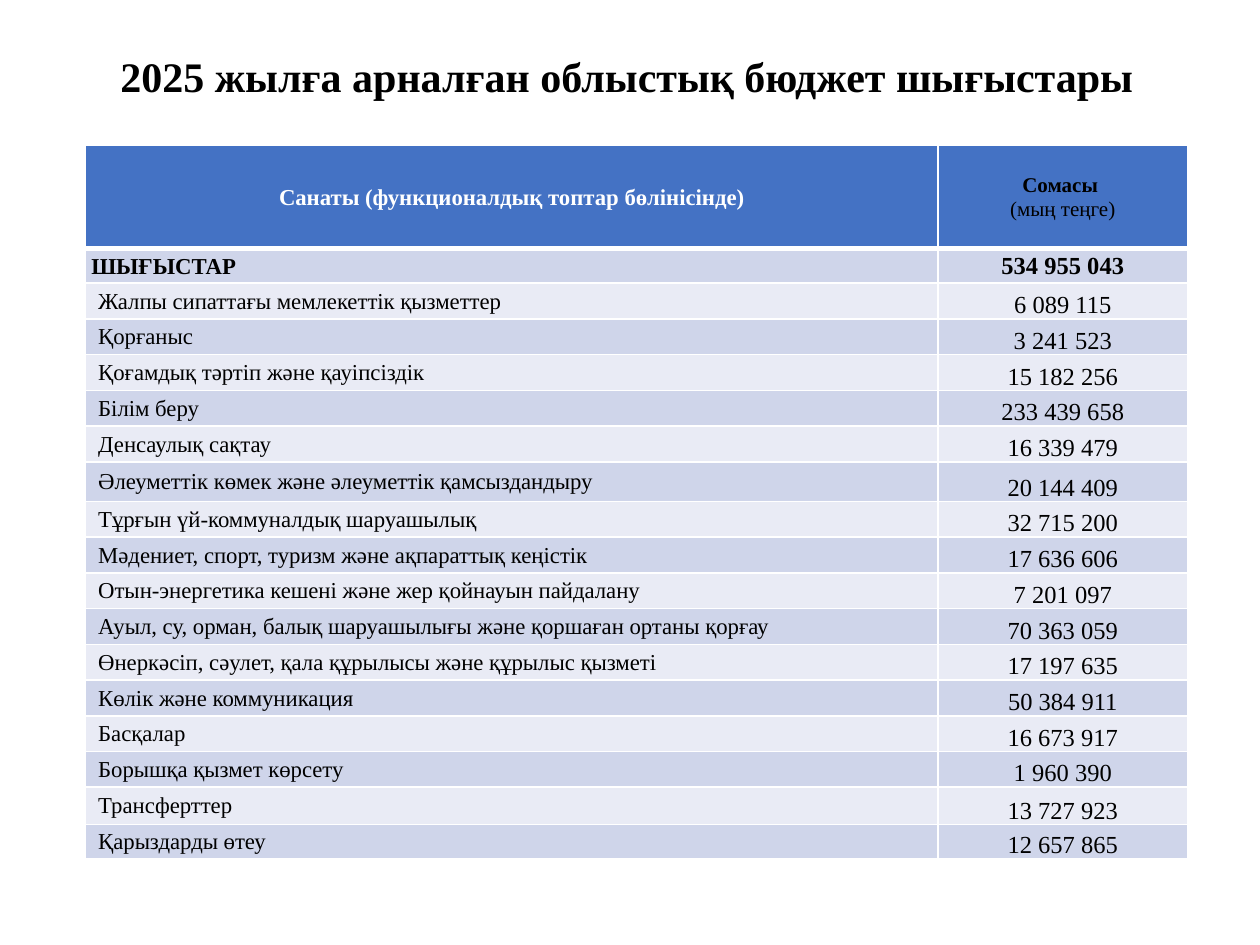
"""Build the slide with the 2025 regional budget expenditure table."""
import pptx
import pptx.dml.color
import pptx.enum.text
import pptx.oxml
import pptx.oxml.ns
import pptx.util

Cm = pptx.util.Cm
Pt = pptx.util.Pt
RGBColor = pptx.dml.color.RGBColor
ALIGN = pptx.enum.text.PP_ALIGN
ANCHOR = pptx.enum.text.MSO_ANCHOR

BLACK = RGBColor(0x00, 0x00, 0x00)
WHITE = RGBColor(0xFF, 0xFF, 0xFF)
HEADER_BLUE = RGBColor(0x44, 0x72, 0xC4)
BAND_DARK = RGBColor(0xCF, 0xD5, 0xEA)
BAND_LIGHT = RGBColor(0xE9, 0xEB, 0xF5)

HEADERS = ("Санаты (функционалдық топтар бөлінісінде)", "Сомасы \n(мың теңге)")
EXPENSES = [
    ("ШЫҒЫСТАР", "534 955 043"),
    ("Жалпы сипаттағы мемлекеттiк қызметтер", "6 089 115"),
    ("Қорғаныс", "3 241 523"),
    ("Қоғамдық тәртіп және қауіпсіздік", "15 182 256"),
    ("Білім беру", "233 439 658"),
    ("Денсаулық сақтау", "16 339 479"),
    ("Әлеуметтiк көмек және әлеуметтiк қамсыздандыру", "20 144 409"),
    ("Тұрғын үй-коммуналдық шаруашылық", "32 715 200"),
    ("Мәдениет, спорт, туризм және ақпараттық кеңістiк", "17 636 606"),
    ("Отын-энергетика кешенi және жер қойнауын пайдалану", "7 201 097"),
    ("Ауыл, су, орман, балық шаруашылығы және қоршаған ортаны қорғау", "70 363 059"),
    ("Өнеркәсіп, сәулет, қала құрылысы және құрылыс қызметі", "17 197 635"),
    ("Көлiк және коммуникация", "50 384 911"),
    ("Басқалар", "16 673 917"),
    ("Борышқа қызмет көрсету", "1 960 390"),
    ("Трансферттер", "13 727 923"),
    ("Қарыздарды өтеу", "12 657 865"),
]
ROW_HEIGHT = 0.72
SPECIAL_HEIGHTS = {0: 2.08, 1: 0.7, 7: 0.8, 16: 0.75, 17: 0.7}


def style_text(para, size, color, bold, align):
    para.alignment = align
    for span in para.runs:
        span.font.name = "Times New Roman"
        span.font.size = Pt(size)
        span.font.bold = bold
        span.font.color.rgb = color


def add_borders(cell, widths):
    properties = cell._tc.get_or_add_tcPr()
    for side, width in widths.items():
        properties.append(pptx.oxml.parse_xml(
            f'<a:{side} {pptx.oxml.ns.nsdecls("a")} w="{Pt(width)}">'
            f'<a:solidFill><a:srgbClr val="{WHITE}"/></a:solidFill></a:{side}>'))


deck = pptx.Presentation()
deck.slide_width = Cm(25.4)
deck.slide_height = Cm(19.05)
page = deck.slides.add_slide(deck.slide_layouts[6])

title_box = page.shapes.add_textbox(Cm(1.32), Cm(0.94), Cm(22.63), Cm(1.24))
title_frame = title_box.text_frame
title_frame.word_wrap = True
title_frame.vertical_anchor = ANCHOR.BOTTOM
title_frame.text = "2025 жылға арналған облыстық бюджет шығыстары"
title_frame.paragraphs[0].line_spacing = 0.9
style_text(title_frame.paragraphs[0], 24, BLACK, True, ALIGN.CENTER)

rows = [HEADERS] + EXPENSES
heights = [SPECIAL_HEIGHTS.get(index, ROW_HEIGHT) for index in range(len(rows))]
table = page.shapes.add_table(
    len(rows), 2, Cm(1.71), Cm(2.93), Cm(22.23), Cm(sum(heights))).table
table.columns[0].width = Cm(17.2)
table.columns[1].width = Cm(5.03)

for row_index, values in enumerate(rows):
    table.rows[row_index].height = Cm(heights[row_index])
    is_header = row_index == 0
    band = HEADER_BLUE if is_header else BAND_DARK if row_index % 2 else BAND_LIGHT
    for column_index, value in enumerate(values):
        cell = table.cell(row_index, column_index)
        is_amount = column_index == 1
        cell.margin_left = cell.margin_top = cell.margin_right = Cm(0.02)
        cell.margin_bottom = 0
        cell.vertical_anchor = (
            ANCHOR.BOTTOM if is_amount and row_index > 1 else ANCHOR.MIDDLE)
        add_borders(cell, {"lnL": 1, "lnR": 1, "lnT": 3 if row_index == 1 else 1,
                           "lnB": 3 if is_header else 1})
        cell.fill.solid()
        cell.fill.fore_color.rgb = band
        cell.text_frame.text = value
        size = 13 if not is_amount else 12 if is_header else 14
        color = WHITE if is_header and not is_amount else BLACK
        align = ALIGN.CENTER if is_header or is_amount else ALIGN.LEFT
        for para_index, para in enumerate(cell.text_frame.paragraphs):
            style_text(para, size, color, row_index < 2 and para_index == 0, align)
            if not is_header and not is_amount:
                indent = Cm(0.11 if row_index == 1 else 0.25)
                para._p.get_or_add_pPr().set("marL", str(indent))

deck.save("out.pptx")
